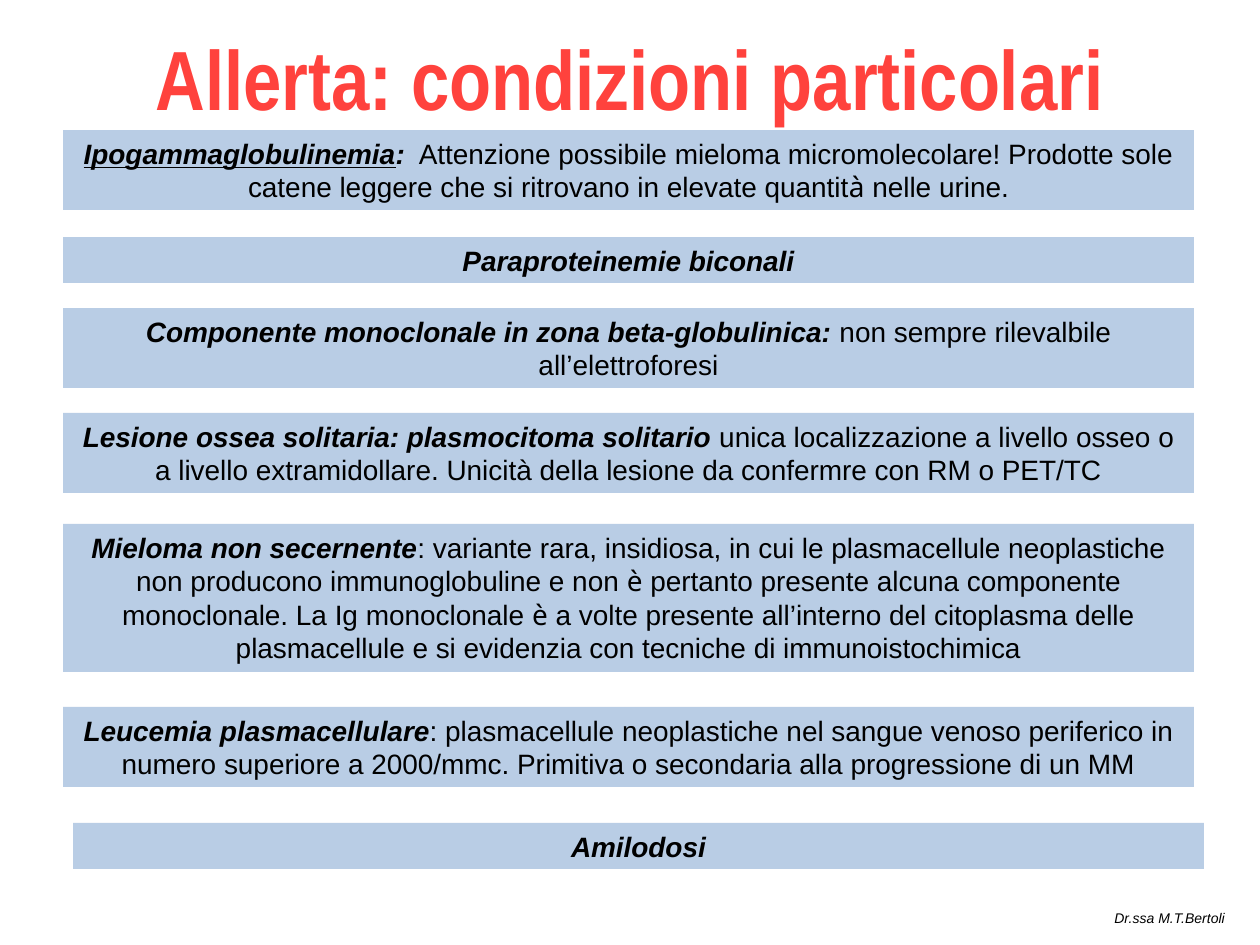
from pptx import Presentation
from pptx.dml.color import RGBColor
from pptx.enum.shapes import MSO_SHAPE
from pptx.enum.text import MSO_ANCHOR, MSO_AUTO_SIZE, PP_ALIGN
from pptx.util import Emu, Pt

PX = 914400 // 126

TITLE = "Allerta: condizioni particolari"
AUTHOR = "Dr.ssa M.T.Bertoli"

BODY = {"name": "Arial", "size": Pt(16), "bold": False, "italic": False}
TERM = BODY | {"bold": True, "italic": True}
LINKED_TERM = TERM | {"underline": True}
ACCENT = BODY | {"name": "Noto Sans"}
HEADING = {"name": "Arial Narrow", "size": Pt(48), "bold": True}
SIGNATURE = {"name": "Arial", "size": Pt(8), "italic": True}

# left, top, number of text lines, runs
CONDITIONS = [
    (63, 130, 2, [
        ("Ipogammaglobulinemia", LINKED_TERM),
        (":", TERM),
        ("  Attenzione possibile mieloma micromolecolare! Prodotte sole catene "
         "leggere che si ritrovano in elevate quantit", BODY),
        ("à", ACCENT),
        (" nelle urine.", BODY)]),
    (63, 237, 1, [("Paraproteinemie biconali", TERM)]),
    (63, 308, 2, [
        ("Componente monoclonale in zona beta-globulinica: ", TERM),
        ("non sempre rilevalbile all’elettroforesi", BODY)]),
    (63, 413, 2, [
        ("Lesione ossea solitaria: plasmocitoma solitario ", TERM),
        ("unica localizzazione a livello osseo o a livello extramidollare. "
         "Unicità della lesione da confermre con RM o PET/TC", BODY)]),
    (63, 524, 4, [
        ("Mieloma non secernente", TERM),
        (": variante rara, insidiosa, in cui le plasmacellule neoplastiche "
         "non producono immunoglobuline e non ", BODY),
        ("è", ACCENT),
        (" pertanto presente alcuna componente monoclonale. La Ig monoclonale ", BODY),
        ("è", ACCENT),
        (" a volte presente all’interno del citoplasma delle plasmacellule "
         "e si evidenzia con tecniche di immunoistochimica", BODY)]),
    (63, 707, 2, [
        ("Leucemia plasmacellulare", TERM),
        (": plasmacellule neoplastiche nel sangue venoso periferico in numero "
         "superiore a 2000/mmc. Primitiva o secondaria alla progressione di un MM", BODY)]),
    (73, 823, 1, [("Amilodosi", TERM)]),
]
BAR_WIDTH, LINE_HEIGHT, BAR_PADDING = 1131, 34, 12


def color(value):
    return RGBColor.from_string(value)


def box(*lengths):
    return [Emu(length * PX) for length in lengths]


def write(shape, runs, align, anchor=MSO_ANCHOR.TOP, ink="000000"):
    frame = shape.text_frame
    frame.word_wrap = True
    frame.auto_size = MSO_AUTO_SIZE.NONE
    frame.vertical_anchor = anchor
    paragraph = frame.paragraphs[0]
    paragraph.alignment = align
    for text, style in runs:
        run = paragraph.add_run()
        run.text = text
        for attribute, value in style.items():
            setattr(run.font, attribute, value)
        run.font.color.rgb = color(ink)
    return paragraph


def add_condition(slide, left, top, lines, runs):
    height = BAR_PADDING + lines * LINE_HEIGHT
    bar = slide.shapes.add_shape(MSO_SHAPE.RECTANGLE, *box(left, top, BAR_WIDTH, height))
    bar.shadow.inherit = False
    bar.fill.solid()
    bar.fill.fore_color.rgb = color("B9CDE5")
    bar.line.fill.background()
    write(bar, runs, PP_ALIGN.CENTER)


def main():
    deck = Presentation()
    deck.slide_width, deck.slide_height = box(1260, 945)
    slide = deck.slides.add_slide(deck.slide_layouts[5])

    title = slide.shapes.title
    title.left, title.top, title.width, title.height = box(0, 10, 1260, 134)
    write(title, [(TITLE, HEADING)], PP_ALIGN.CENTER, MSO_ANCHOR.MIDDLE, "FF423D")

    for condition in CONDITIONS:
        add_condition(slide, *condition)

    author = slide.shapes.add_textbox(*box(1102, 903, 148, 29))
    write(author, [(AUTHOR, SIGNATURE)], PP_ALIGN.LEFT)

    deck.save("out.pptx")


if __name__ == "__main__":
    main()
